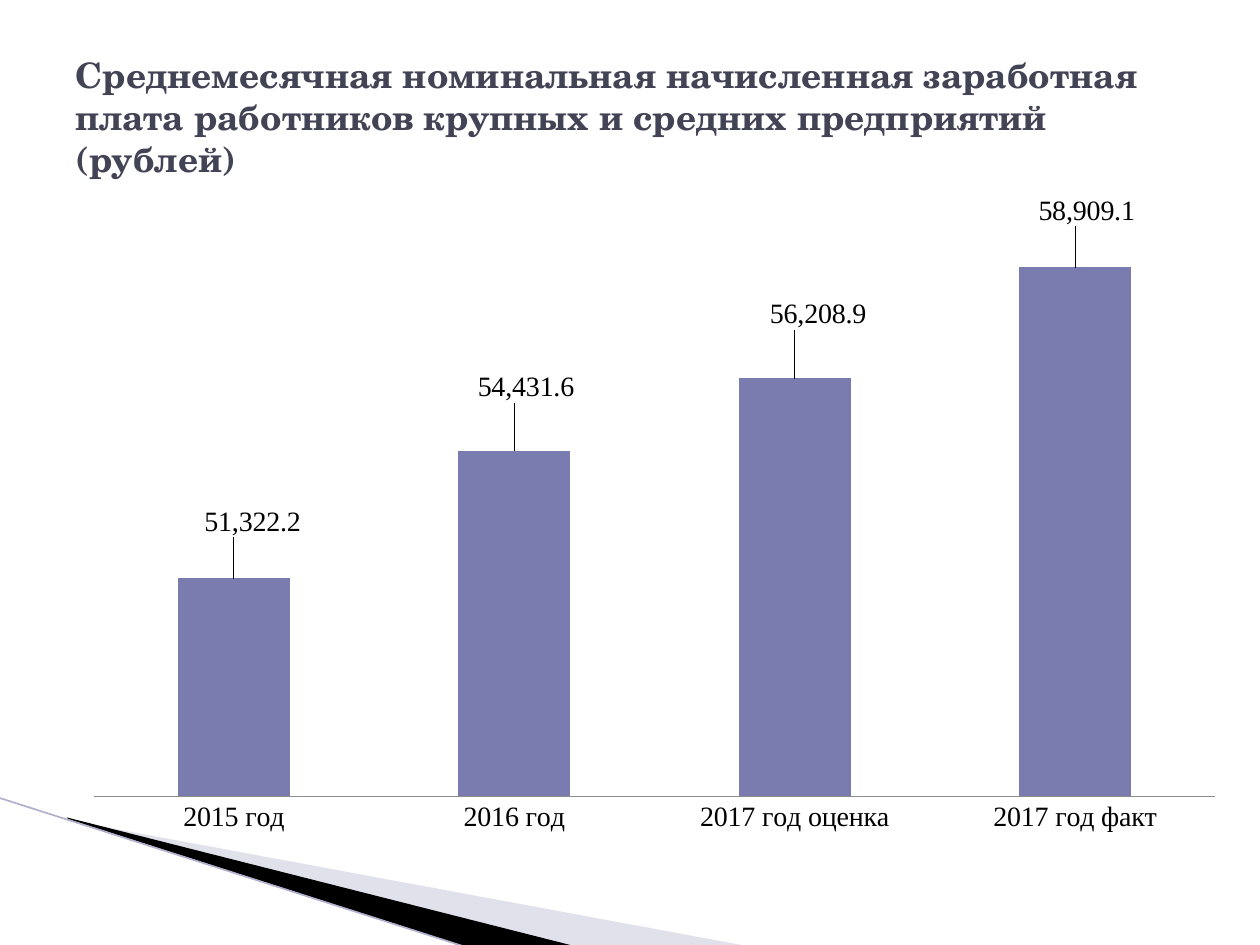
from lxml.etree import SubElement
from pptx import Presentation
from pptx.chart.data import CategoryChartData
from pptx.dml.color import RGBColor
from pptx.enum.chart import XL_CHART_TYPE, XL_LABEL_POSITION, XL_TICK_MARK
from pptx.enum.shapes import MSO_CONNECTOR
from pptx.enum.text import MSO_ANCHOR, PP_ALIGN
from pptx.oxml import parse_xml
from pptx.oxml.ns import nsdecls, qn
from pptx.util import Cm, Pt

COLORS = {
    "heading": "424456",
    "text": "000000",
    "bar": "7A7BAE",
    "axis": "8B8B8B",
    "pale": "B6B6D1",
    "dark": "000000",
    "edge": "AFB0CC",
}
WAGES = {
    "2015 год": 51322.2,
    "2016 год": 54431.6,
    "2017 год оценка": 56208.9,
    "2017 год факт": 58909.1,
}
LABEL_SHIFTS = [(0.016, -0.05), (0.01, -0.06), (0.02, -0.06), (0.01, -0.05)]
NUMBER_FORMAT = "#,##0.0"


def rgb(name):
    return RGBColor.from_string(COLORS[name])


def style_font(font, face, size, color="text", bold=False):
    font.name = face
    font.size = Pt(size)
    font.bold = bold
    font.color.rgb = rgb(color)


def write_text(frame, text, face, size, color="text", bold=False, align=PP_ALIGN.LEFT):
    paragraph = frame.paragraphs[0]
    paragraph.alignment = align
    run = paragraph.add_run()
    run.text = text
    style_font(run.font, face, size, color, bold)


class SlideBuilder:
    heading_face = "TeX Gyre Schola"
    chart_face = "Noto Sans Mono"
    label_face = "Times New Roman"

    def __init__(self, slide):
        self.slide = slide

    def title(self, text, box):
        heading = self.slide.shapes.title
        heading.left, heading.top, heading.width, heading.height = map(Cm, box)
        heading.text_frame.vertical_anchor = MSO_ANCHOR.MIDDLE
        write_text(heading.text_frame, text, self.heading_face, 20, "heading", bold=True)

    def wedge(self, points, color, opacity=100):
        start, *rest = [(Cm(x), Cm(y)) for x, y in points]
        outline = self.slide.shapes.build_freeform(*start)
        outline.add_line_segments(rest, close=True)
        wedge = outline.convert_to_shape()
        wedge.shadow.inherit = False
        wedge.line.fill.background()
        wedge.fill.solid()
        wedge.fill.fore_color.rgb = rgb(color)
        if opacity < 100:
            tint = wedge.fill._xPr.find(".//" + qn("a:srgbClr"))
            SubElement(tint, qn("a:alpha"), val=str(opacity * 1000))

    def line(self, start, end, color, width):
        edge = self.slide.shapes.add_connector(
            MSO_CONNECTOR.STRAIGHT, *map(Cm, start + end))
        edge.line.color.rgb = rgb(color)
        edge.line.width = Pt(width)
        SubElement(edge._element.spPr, qn("a:effectLst"))

    def columns(self, values, shifts, box):
        data = CategoryChartData(number_format=NUMBER_FORMAT)
        data.categories = list(values)
        data.add_series("Series 1", list(values.values()))
        chart = self.slide.shapes.add_chart(
            XL_CHART_TYPE.COLUMN_CLUSTERED, *map(Cm, box), data).chart
        chart.has_legend = False
        chart.has_title = False
        style_font(chart.font, self.chart_face, 18)

        years = chart.category_axis
        years.major_tick_mark = XL_TICK_MARK.NONE
        years.format.line.color.rgb = rgb("axis")
        style_font(years.tick_labels.font, self.label_face, 16)

        scale = chart.value_axis
        scale.visible = False
        scale.has_major_gridlines = False
        scale.minimum_scale = 46000
        scale.maximum_scale = 60170
        scale.tick_labels.number_format = NUMBER_FORMAT
        scale.tick_labels.number_format_is_linked = False

        plot = chart.plots[0]
        plot.gap_width = 150
        plot.vary_by_categories = False
        wages = plot.series[0]
        wages.format.fill.solid()
        wages.format.fill.fore_color.rgb = rgb("bar")
        labels = wages.data_labels
        labels.show_value = True
        labels.number_format = NUMBER_FORMAT
        labels.number_format_is_linked = False
        labels.position = XL_LABEL_POSITION.OUTSIDE_END
        style_font(labels.font, self.label_face, 16)
        for index, (x, y) in enumerate(shifts):
            label = wages.points[index].data_label
            style_font(label.font, self.label_face, 16)
            label.position = XL_LABEL_POSITION.OUTSIDE_END
            entry = labels._element.findall(qn("c:dLbl"))[index]
            entry.find(qn("c:idx")).addnext(self.layout(x=x, y=y))

        area = chart._chartSpace.chart.plotArea
        for old in area.findall(qn("c:layout")):
            area.remove(old)
        area.insert(0, self.layout(
            layoutTarget="inner", xMode="edge", yMode="edge",
            x=0.025, y=0.027, w=0.958, h=0.814))

    def layout(self, **settings):
        parts = "".join(f'<c:{key} val="{value}"/>' for key, value in settings.items())
        return parse_xml(
            f'<c:layout {nsdecls("c")}><c:manualLayout>{parts}</c:manualLayout></c:layout>')


def main():
    deck = Presentation()
    deck.slide_width, deck.slide_height = Cm(25.4), Cm(19.05)
    builder = SlideBuilder(deck.slides.add_slide(deck.slide_layouts[5]))
    builder.title(
        "Среднемесячная номинальная начисленная заработная плата "
        "работников крупных и средних предприятий (рублей)",
        (1.27, 0.76, 22.86, 3.18))
    builder.wedge([(1.4, 16.54), (15.11, 19.08), (11.58, 19.08), (1.4, 16.51)], "pale", 40)
    builder.wedge([(1.35, 16.48), (11.61, 19.08), (9.45, 19.1), (1.37, 16.51)], "dark")
    builder.line((-0.03, 16.08), (9.42, 19.1), "edge", 0.95)
    builder.columns(WAGES, LABEL_SHIFTS, (1.3, 3.94, 23.6, 14.4))
    deck.save("out.pptx")


if __name__ == "__main__":
    main()
